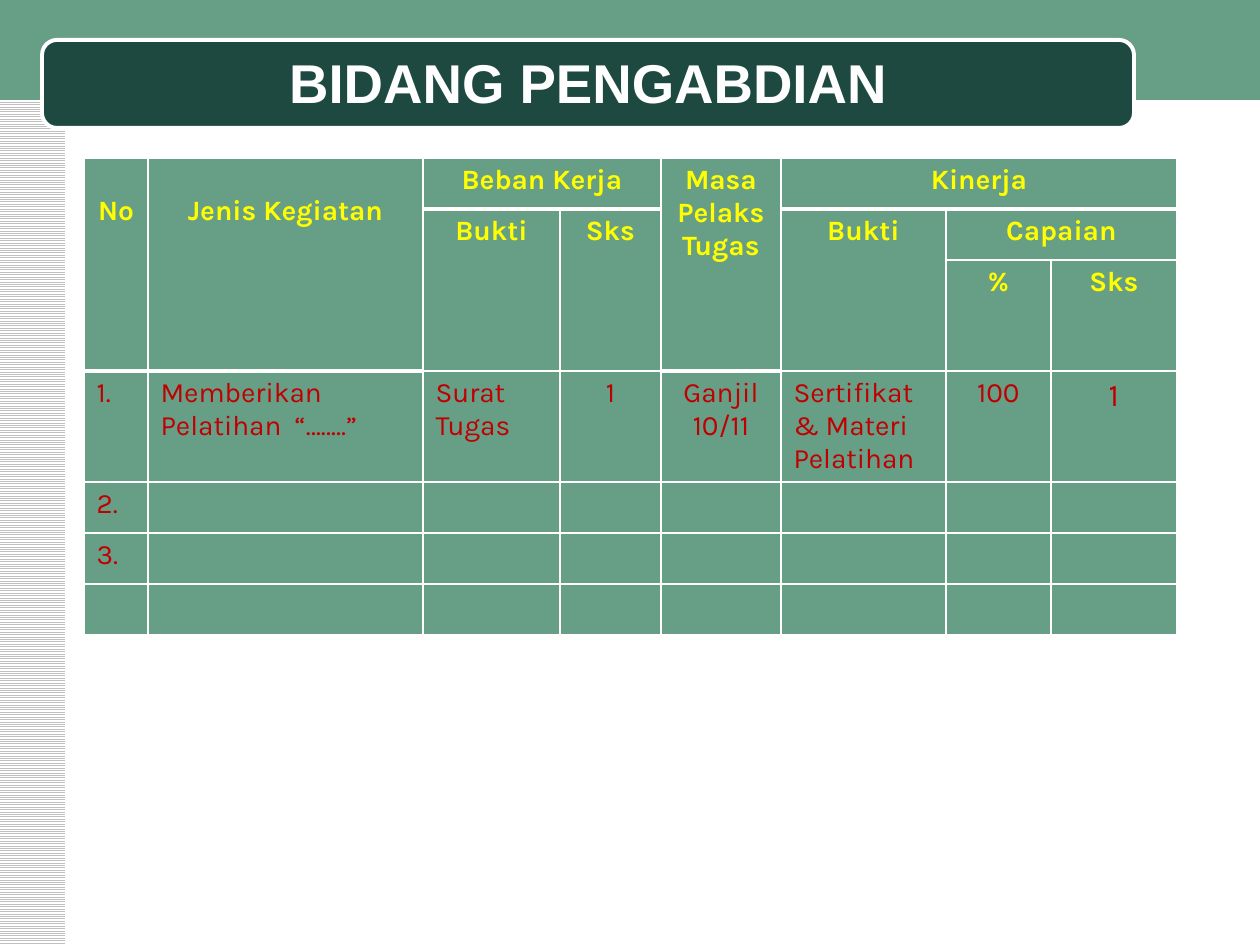
from dataclasses import dataclass

from lxml.etree import SubElement as Sub
from pptx import Presentation
from pptx.dml.color import RGBColor as Rgb
from pptx.enum.dml import MSO_PATTERN as Pattern
from pptx.enum.shapes import MSO_SHAPE as Shape
from pptx.enum.text import MSO_ANCHOR as Anchor, MSO_AUTO_SIZE as Fit, PP_ALIGN as Align
from pptx.oxml.ns import qn
from pptx.util import Emu, Pt


@dataclass(frozen=True)
class Theme:
    green: str = "669E86"
    dark: str = "1D4940"
    white: str = "FFFFFF"
    title: str = "FEFEFE"
    gray: str = "C0C0C0"
    head: str = "FFFF00"
    body: str = "C00000"
    title_font: str = "Arial"
    font: str = "Karla"
    title_size: float = 31.2
    size: int = 16
    large: int = 18
    thin: int = 1
    thick: int = 3


def px(n):
    return Emu(round(n * 914400 / 126))


def rgb(code):
    return Rgb.from_string(code)


class Deck:
    """Holds the theme and the current slide."""

    def __init__(self, theme):
        self.theme = theme
        self.prs = Presentation()
        self.prs.slide_width, self.prs.slide_height = px(1260), px(945)
        self.slide = self.prs.slides.add_slide(self.prs.slide_layouts[5])

    def style(self, para, font, size, color, bold, align):
        para.alignment = align
        for run in para.runs:
            face = run.font
            face.name, face.size, face.bold = font, Pt(size), bold
            face.color.rgb = rgb(color)

    def box(self, kind, area, color=None):
        shape = self.slide.shapes.add_shape(kind, *map(px, area))
        shape.shadow.inherit = False
        shape.line.fill.background()
        if color:
            shape.fill.solid()
            shape.fill.fore_color.rgb = rgb(color)
        return shape

    def stripes(self, area):
        fill = self.box(Shape.RECTANGLE, area).fill
        fill.patterned()
        fill.pattern = Pattern.LIGHT_HORIZONTAL
        fill.fore_color.rgb = rgb(self.theme.gray)
        fill.back_color.rgb = rgb(self.theme.white)

    def banner(self, area):
        shape = self.box(Shape.ROUNDED_RECTANGLE, area, self.theme.dark)
        shape.adjustments[0] = 0.17
        shape.line.color.rgb = rgb(self.theme.white)
        shape.line.width = Pt(2.25)

    def title(self, text, area):
        t = self.theme
        shape = self.slide.shapes.title
        shape.left, shape.top, shape.width, shape.height = map(px, area)
        self.slide.shapes._spTree.append(shape._element)  # bring to front
        frame = shape.text_frame
        frame.text = text
        frame.auto_size, frame.vertical_anchor = Fit.NONE, Anchor.MIDDLE
        self.style(frame.paragraphs[0], t.title_font, t.title_size, t.title, True, Align.CENTER)

    def table(self, left, top, cols, rows, spans, thick):
        """Make an empty grid; thick lists the cells with a heavy bottom edge."""
        t = self.theme
        area = left, top, sum(cols), sum(rows)
        grid = self.slide.shapes.add_table(len(rows), len(cols), *map(px, area)).table
        grid.first_row = grid.horz_banding = False
        for col, width in zip(grid.columns, cols):
            col.width = px(width)
        for row, height in zip(grid.rows, rows):
            row.height = px(height)
        for r in range(len(rows)):
            for c in range(len(cols)):
                cell = grid.cell(r, c)
                above = t.thick if (r - 1, c) in thick else t.thin
                below = t.thick if (r, c) in thick else t.thin
                self.edges(cell, L=t.thin, R=t.thin, T=above, B=below)
                cell.fill.solid()
                cell.fill.fore_color.rgb = rgb(t.green)
        for r, c, down, across in spans:
            grid.cell(r, c).merge(grid.cell(r + down - 1, c + across - 1))
        return grid

    def edges(self, cell, **widths):
        props = cell._tc.get_or_add_tcPr()
        for side, width in widths.items():
            line = Sub(props, qn(f"a:ln{side}"), w=str(Pt(width)))
            fill = Sub(line, qn("a:solidFill"))
            Sub(fill, qn("a:srgbClr"), val=self.theme.white)

    def label(self, cell, text, color, bold=False, align=Align.CENTER, size=None):
        para = cell.text_frame.paragraphs[0]
        para.text = text
        self.style(para, self.theme.font, size or self.theme.size, color, bold, align)


HEADS = {
    (0, 0): "No", (0, 1): "Jenis Kegiatan", (0, 2): "Beban Kerja",
    (0, 4): "Masa Pelaks Tugas", (0, 5): "Kinerja",
    (1, 2): "Bukti", (1, 3): "Sks", (1, 5): "Bukti", (1, 6): "Capaian",
    (2, 6): "%", (2, 7): "Sks",
}
SPANS = [
    (0, 0, 3, 1), (0, 1, 3, 1), (0, 2, 1, 2), (0, 4, 3, 1), (0, 5, 1, 3),
    (1, 2, 2, 1), (1, 3, 2, 1), (1, 5, 2, 1), (1, 6, 1, 2),
]
BODY = [
    ["1.", "Memberikan Pelatihan  “……..”", "Surat Tugas", "1", "Ganjil 10/11",
     "Sertifikat & Materi Pelatihan", "100", "1"],
    ["2."],
    ["3."],
]
COLS = [64, 275, 137, 101, 120, 165, 105, 126]
ROWS = [51, 51, 111, 111, 51, 51, 51]
LEFT_COLS = {0, 1, 2, 5}


def main():
    theme = Theme()
    deck = Deck(theme)
    deck.stripes((0, 0, 65, 945))
    deck.box(Shape.RECTANGLE, (0, 0, 1260, 100), theme.green)
    deck.banner((42, 40, 1092, 88))
    deck.title("BIDANG PENGABDIAN", (63, 38, 1050, 88))

    thick = {(0, c) for c in range(len(COLS))} | {(2, c) for c in (0, 1, 4)}
    grid = deck.table(84, 158, COLS, ROWS, SPANS, thick)
    for spot, text in HEADS.items():
        deck.label(grid.cell(*spot), text, theme.head, bold=True)
    for c in (0, 1):
        grid.cell(0, c).margin_top = px(37)
    for r, texts in enumerate(BODY, 3):
        for c, text in enumerate(texts):
            align = Align.LEFT if c in LEFT_COLS else Align.CENTER
            size = theme.large if c == len(COLS) - 1 else theme.size
            deck.label(grid.cell(r, c), text, theme.body, align=align, size=size)
    deck.prs.save("out.pptx")


if __name__ == "__main__":
    main()
